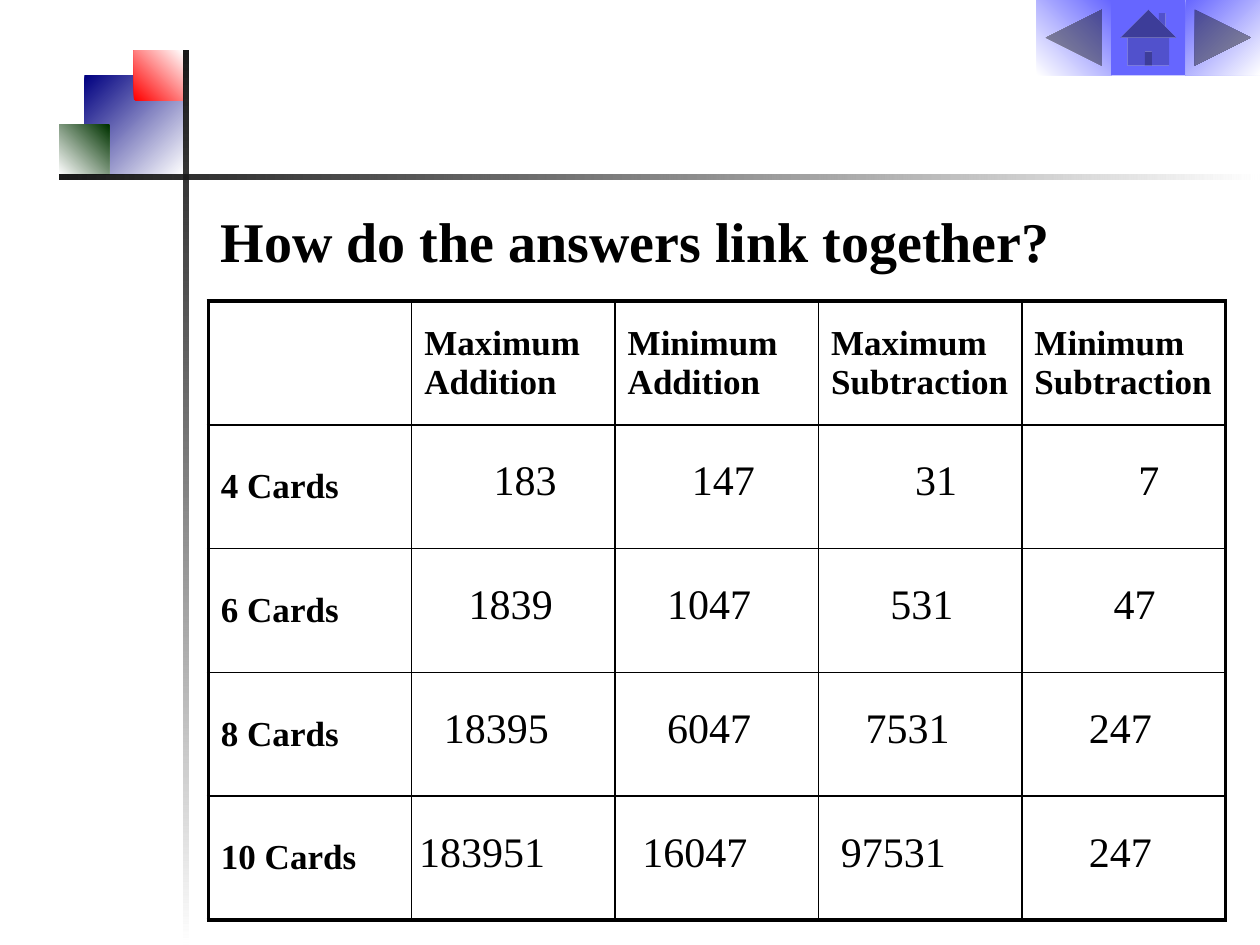
from lxml.etree import SubElement
from pptx import Presentation
from pptx.dml.color import RGBColor
from pptx.enum.shapes import MSO_SHAPE as Preset
from pptx.enum.text import MSO_ANCHOR as Anchor, MSO_AUTO_SIZE as AutoSize
from pptx.oxml.ns import qn
from pptx.util import Mm, Pt

UNIT = Mm(5)
FONT = "Times New Roman"
BLACK = "000000"
HEADINGS = ["", "Maximum Addition", "Minimum Addition",
            "Maximum Subtraction", "Minimum Subtraction"]
ANSWERS = {
    "4 Cards": ["183", "147", "31", "7"],
    "6 Cards": ["1839", "1047", "531", "47"],
    "8 Cards": ["18395", "6047", "7531", "247"],
    "10 Cards": ["183951", "16047", "97531", "247"],
}


def color(hex_value):
    return RGBColor.from_string(hex_value)


def grid(*units):
    return [round(UNIT * unit) for unit in units]


def add_block(slide, box, fills, angle=0, preset=Preset.RECTANGLE):
    block = slide.shapes.add_shape(preset, *grid(*box))
    block.shadow.inherit = False
    block.line.fill.background()
    if len(fills) == 1:
        block.fill.solid()
        block.fill.fore_color.rgb = color(fills[0])
        return
    block.fill.gradient()
    block.fill.gradient_angle = -angle % 360
    for stop, hex_value in zip(block.fill.gradient_stops, fills):
        stop.color.rgb = color(hex_value)
    for shade in block.element.iter(qn("a:srgbClr")):
        if shade.get("val") == BLACK:
            SubElement(shade, qn("a:alpha"), val="90000")


def add_run(paragraph, text, size, bold=False):
    run = paragraph.add_run()
    run.text = text
    run.font.name = FONT
    run.font.size = Pt(size)
    run.font.bold = bold
    run.font.color.rgb = color(BLACK)


def add_label(slide, box, text, size, bold=False):
    frame = slide.shapes.add_textbox(*grid(*box)).text_frame
    frame.word_wrap = True
    frame.auto_size = AutoSize.SHAPE_TO_FIT_TEXT
    add_run(frame.paragraphs[0], text, size, bold)


def add_ornament(slide, left, top, width, height):
    add_block(slide, (left + 1, top + 1, 4, 4), ["000080", "FFFFFF"], 45)
    add_block(slide, (left + 3, top, 2, 2), ["FF0000", "FFFFFF"], 315)
    add_block(slide, (left, top + 3, 2, 2), ["FFFFFF", "003300"], 315)
    add_block(slide, (left + 5, top, 0.2, height), [BLACK, "FFFFFF"], 90)
    add_block(slide, (left, top + 5, width, 0.2), [BLACK, "FFFFFF"])


def add_navigation(slide, left, top, width, height):
    buttons = [
        (Preset.ACTION_BUTTON_BACK_OR_PREVIOUS, ["FFFFFF", "6666FF"], 315),
        (Preset.ACTION_BUTTON_HOME, ["6666FF"], 0),
        (Preset.ACTION_BUTTON_FORWARD_OR_NEXT, ["6666FF", "FFFFFF"], 45),
    ]
    step = width / len(buttons)
    for index, (preset, fills, angle) in enumerate(buttons):
        box = (left + index * step, top, step, height)
        add_block(slide, box, fills, angle, preset)


def set_borders(cell, outer_sides):
    properties = cell._tc.get_or_add_tcPr()
    for side in "LRTB":
        width = Pt(2.25 if side in outer_sides else 1)
        line = SubElement(properties, qn(f"a:ln{side}"), w=str(width))
        fill = SubElement(line, qn("a:solidFill"))
        SubElement(fill, qn("a:srgbClr"), val=BLACK)


def add_answer_table(slide, left, top, width, height):
    rows = [HEADINGS] + [[name] + [""] * 4 for name in ANSWERS]
    last = len(rows) - 1
    table = slide.shapes.add_table(
        len(rows), len(HEADINGS), *grid(left, top, width, height)).table
    table.first_row = table.horz_banding = False
    for row, texts in enumerate(rows):
        for column, text in enumerate(texts):
            cell = table.cell(row, column)
            edges = {"L": column == 0, "R": column == last,
                     "T": row == 0, "B": row == last}
            set_borders(cell, [side for side, outer in edges.items() if outer])
            cell.fill.background()
            cell.vertical_anchor = Anchor.MIDDLE
            if text:
                add_run(cell.text_frame.paragraphs[0], text, 20, True)


def add_answers(slide, left, top, width, height):
    column_step = width / 4
    row_step = height / len(ANSWERS)
    for row, answers in enumerate(ANSWERS.values()):
        for column, answer in enumerate(answers):
            digits = len(answer)
            right = left + (column + 1) * column_step
            box = (right - digits, top + row * row_step, max(4, digits + 1), 2.54)
            add_label(slide, box, answer, 24)


def main():
    deck = Presentation()
    deck.slide_width, deck.slide_height = grid(50.8, 38.1)
    slide = deck.slides.add_slide(deck.slide_layouts[6])
    add_ornament(slide, 2.4, 2.04, 48.4, 36.06)
    add_navigation(slide, 41.8, 0, 9, 3.04)
    add_label(slide, (8.4, 8.08, 40, 3.2), "How do the answers link together?", 32, True)
    add_answer_table(slide, 8.4, 12.14, 41, 24.95)
    add_answers(slide, 14.4, 18.04, 32, 20)
    deck.save("out.pptx")


if __name__ == "__main__":
    main()
